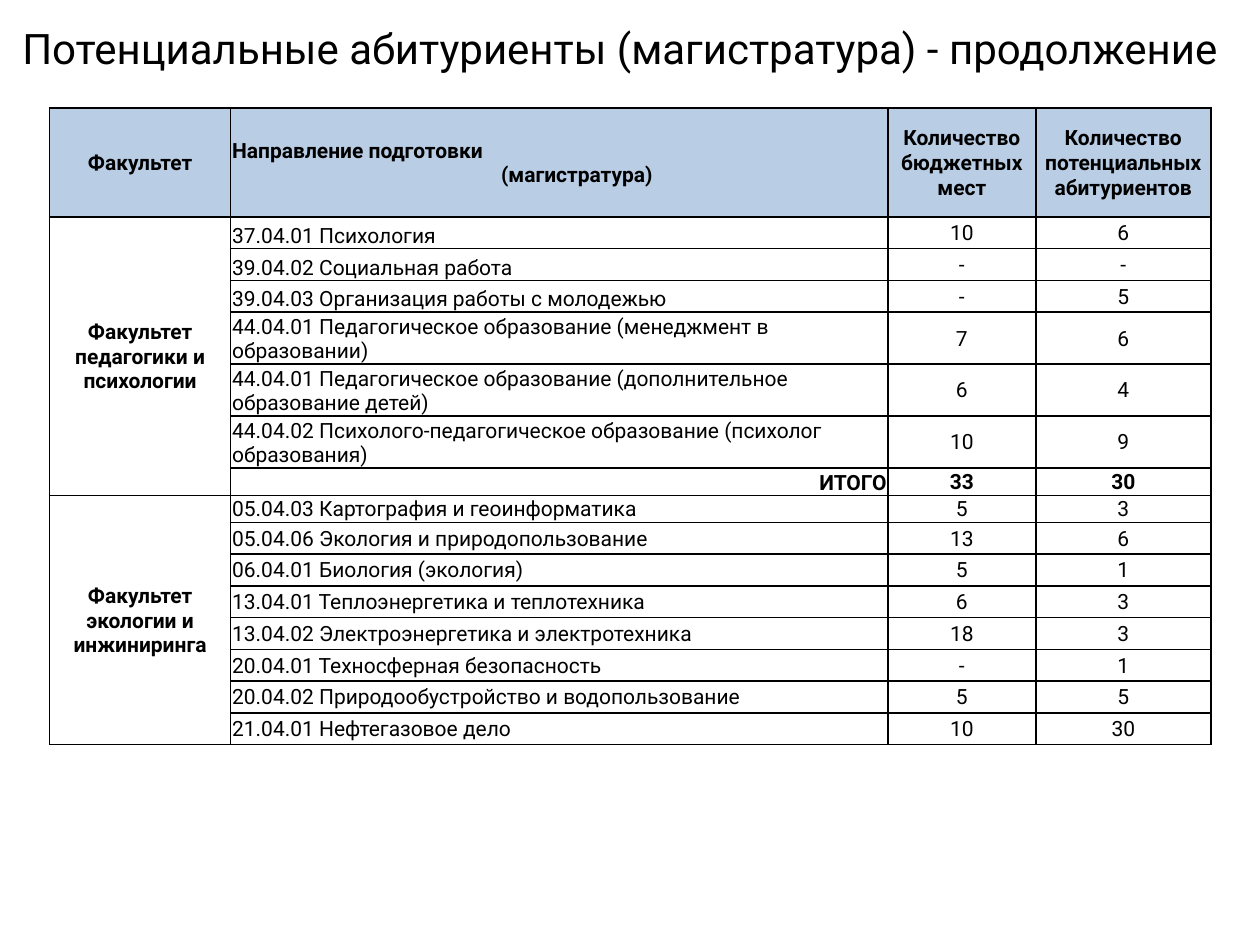
"""Build the slide with the table of potential master's applicants."""
from lxml import etree
from pptx import Presentation
from pptx.dml.color import RGBColor
from pptx.enum.text import MSO_ANCHOR, PP_ALIGN
from pptx.oxml.ns import qn
from pptx.util import Cm, Pt

LEFT, CENTER, RIGHT = PP_ALIGN.LEFT, PP_ALIGN.CENTER, PP_ALIGN.RIGHT
MIDDLE, BOTTOM = MSO_ANCHOR.MIDDLE, MSO_ANCHOR.BOTTOM
COLORS = {"text": "000000", "border": "000000", "header": "B9CDE5"}
FONT = "Roboto"
COLUMN_WIDTHS = [3.65, 13.25, 2.98, 3.53]
HEADER_HEIGHT, ROW_HEIGHT, TALL_HEIGHT = 2.19, 0.64, 1.02
TOTAL_HEIGHT, AFTER_TOTAL_HEIGHT = 0.56, 0.53
TOTAL = "ИТОГО"
HEADERS = [
    "Факультет",
    "Направление подготовки\n(магистратура)",
    "Количество бюджетных мест",
    "Количество потенциальных абитуриентов",
]
FACULTIES = [
    ("Факультет педагогики и психологии", BOTTOM, [
        ("37.04.01 Психология", "10", "6", ROW_HEIGHT),
        ("39.04.02 Социальная работа", "-", "-", ROW_HEIGHT),
        ("39.04.03 Организация работы с молодежью", "-", "5", ROW_HEIGHT),
        ("44.04.01 Педагогическое образование (менеджмент в образовании)",
         "7", "6", TALL_HEIGHT),
        ("44.04.01 Педагогическое образование (дополнительное образование детей)",
         "6", "4", TALL_HEIGHT),
        ("44.04.02 Психолого-педагогическое образование (психолог образования)",
         "10", "9", TALL_HEIGHT),
        (TOTAL, "33", "30", TOTAL_HEIGHT),
    ]),
    ("Факультет экологии и инжиниринга", MIDDLE, [
        ("05.04.03 Картография и геоинформатика", "5", "3", AFTER_TOTAL_HEIGHT),
        ("05.04.06 Экология и природопользование", "13", "6", ROW_HEIGHT),
        ("06.04.01 Биология (экология)", "5", "1", ROW_HEIGHT),
        ("13.04.01 Теплоэнергетика и теплотехника", "6", "3", ROW_HEIGHT),
        ("13.04.02 Электроэнергетика и электротехника", "18", "3", ROW_HEIGHT),
        ("20.04.01 Техносферная безопасность", "-", "1", ROW_HEIGHT),
        ("20.04.02 Природообустройство и водопользование", "5", "5", ROW_HEIGHT),
        ("21.04.01 Нефтегазовое дело", "10", "30", ROW_HEIGHT),
    ]),
]


def apply_format(target, values):
    """Set each named attribute on the target."""
    for name, value in values.items():
        setattr(target, name, value)


def format_text(frame, size, bold=False, align=CENTER):
    """Give every paragraph of the frame the same look."""
    for paragraph in frame.paragraphs:
        paragraph.alignment = align
        apply_format(paragraph.font, {"name": FONT, "size": Pt(size), "bold": bold})
        paragraph.font.color.rgb = RGBColor.from_string(COLORS["text"])


def add_title(slide, wording):
    """Add the slide heading."""
    heading = slide.shapes.add_textbox(Cm(-1.19), Cm(0), Cm(27.38), Cm(1.93))
    apply_format(heading.text_frame, {"word_wrap": True, "vertical_anchor": MIDDLE,
                                      "text": wording})
    format_text(heading.text_frame, 24)


def add_borders(cell):
    """Draw a thin line on all four sides of the cell."""
    properties = cell._tc.get_or_add_tcPr()
    for side in ("a:lnL", "a:lnR", "a:lnT", "a:lnB"):
        line = etree.SubElement(properties, qn(side), w=str(Pt(1)))
        fill = etree.SubElement(line, qn("a:solidFill"))
        etree.SubElement(fill, qn("a:srgbClr"), val=COLORS["border"])


def fill_cell(cell, wording, bold=False, align=CENTER, anchor=MIDDLE):
    """Write the wording of one table cell."""
    apply_format(cell, {"text": wording, "vertical_anchor": anchor})
    format_text(cell.text_frame, 12, bold, align)


def style_grid(table):
    """Set margins, borders and fills of all cells."""
    margins = {"margin_left": Cm(0.03), "margin_right": Cm(0.03),
               "margin_top": Cm(0.03), "margin_bottom": Cm(0)}
    for index, row in enumerate(table.rows):
        for cell in row.cells:
            apply_format(cell, margins)
            add_borders(cell)
            if index == 0:
                cell.fill.solid()
                cell.fill.fore_color.rgb = RGBColor.from_string(COLORS["header"])
            else:
                cell.fill.background()


def fill_headers(table):
    """Write the header row, with its second heading set on two lines."""
    for column, wording in enumerate(HEADERS):
        fill_cell(table.cell(0, column), wording, bold=True)
    direction, level = table.cell(0, 1).text_frame.paragraphs
    direction.alignment = level.alignment = LEFT
    level._p.get_or_add_pPr().set("marL", str(Cm(5.42)))


def fill_faculty(table, first, name, anchor, programmes):
    """Write one faculty block starting at the given row."""
    last = first + len(programmes) - 1
    table.cell(first, 0).merge(table.cell(last, 0))
    fill_cell(table.cell(first, 0), name, bold=True)
    for row, (programme, places, applicants, height) in enumerate(programmes, first):
        is_total = programme == TOTAL
        table.rows[row].height = Cm(height)
        fill_cell(table.cell(row, 1), programme, is_total,
                  RIGHT if is_total else LEFT, anchor)
        fill_cell(table.cell(row, 2), places, is_total)
        fill_cell(table.cell(row, 3), applicants, is_total)
    return last + 1


def add_applicants_table(slide):
    """Add the table of faculties, programmes and applicants."""
    programmes = [programme for faculty in FACULTIES for programme in faculty[2]]
    height = HEADER_HEIGHT + sum(programme[3] for programme in programmes)
    table = slide.shapes.add_table(
        len(programmes) + 1, len(HEADERS), Cm(1), Cm(2.18),
        Cm(sum(COLUMN_WIDTHS)), Cm(height)).table
    apply_format(table, {"first_row": False, "horz_banding": False})
    for column, width in zip(table.columns, COLUMN_WIDTHS):
        column.width = Cm(width)
    table.rows[0].height = Cm(HEADER_HEIGHT)
    style_grid(table)
    fill_headers(table)
    next_row = 1
    for faculty in FACULTIES:
        next_row = fill_faculty(table, next_row, *faculty)


def main():
    """Build and save the presentation."""
    presentation = Presentation()
    apply_format(presentation, {"slide_width": Cm(25.4), "slide_height": Cm(19.05)})
    slide = presentation.slides.add_slide(presentation.slide_layouts[6])
    add_title(slide, "Потенциальные абитуриенты (магистратура) - продолжение")
    add_applicants_table(slide)
    presentation.save("out.pptx")


if __name__ == "__main__":
    main()
